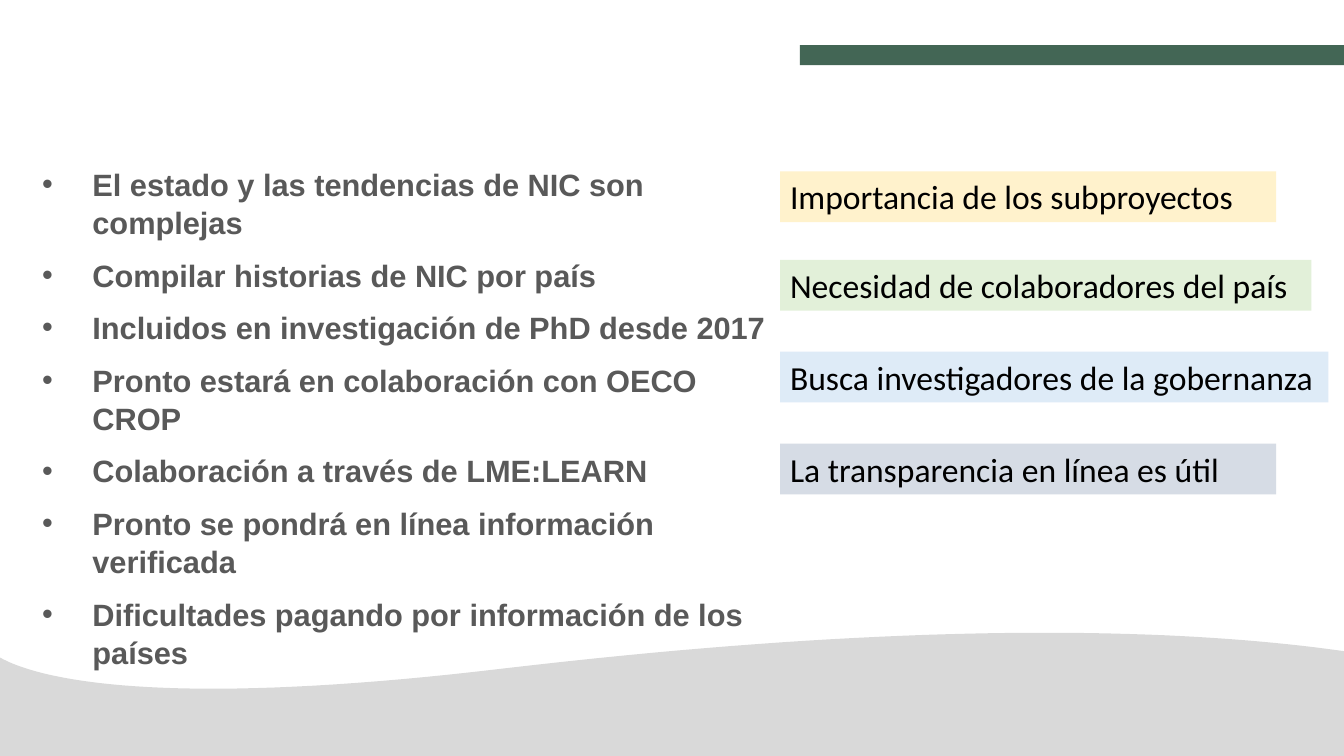
"""Build a slide of NIC findings beside four highlighted conclusions."""
from lxml.etree import SubElement
from pptx import Presentation
from pptx.dml.color import RGBColor
from pptx.enum.shapes import MSO_SHAPE as SHAPE
from pptx.enum.text import MSO_ANCHOR as ANCHOR, PP_ALIGN as ALIGN
from pptx.oxml.ns import qn
from pptx.util import Cm, Pt


def paint(sp, color):
    sp.shadow.inherit = False
    sp.fill.solid()
    sp.fill.fore_color.rgb = RGBColor.from_string(color)
    sp.line.fill.background()


def add_run(p, text, font, size, color, bold=False):
    r = p.add_run()
    r.text = text
    r.font.name, r.font.size, r.font.bold = font, Pt(size), bold
    r.font.color.rgb = RGBColor.from_string(color)


prs = Presentation()
prs.slide_width, prs.slide_height = Cm(33.87), Cm(19.05)
s = prs.slides.add_slide(prs.slide_layouts[6])

wave_curves = [
    [(33.87, 16.41), (29.59, 15.8), (22.91, 15.65), (12.75, 16.84)],
    [(12.75, 16.84), (3.38, 17.96), (0.66, 16.97), (-0.05, 16.54)],
]
steps = 40
wave = [(33.87, 16.41)]
for curve in wave_curves:
    for i in range(1, steps + 1):
        t = i / steps
        weights = ((1 - t) ** 3, 3 * t * (1 - t) ** 2, 3 * t ** 2 * (1 - t), t ** 3)
        wave.append(tuple(sum(w * pt[axis] for w, pt in zip(weights, curve)) for axis in (0, 1)))
wave.append((-0.05, 19.05))
builder = s.shapes.build_freeform(Cm(33.87), Cm(19.05))
builder.add_line_segments([(Cm(x), Cm(y)) for x, y in wave], close=True)
paint(builder.convert_to_shape(), "D9D9D9")

bar = s.shapes.add_shape(SHAPE.RECTANGLE, Cm(20.16), Cm(1.14), Cm(13.71), Cm(0.5))
paint(bar, "436655")

findings = [
    "El estado y las tendencias de NIC son complejas",
    "Compilar historias de NIC por país",
    "Incluidos en investigación de PhD desde 2017",
    "Pronto estará en colaboración con OECO CROP",
    "Colaboración a través de LME:LEARN",
    "Pronto se pondrá en línea información verificada",
    "Dificultades pagando por información de los países",
]
tf = s.shapes.add_textbox(Cm(0.81), Cm(4.01), Cm(18.85), Cm(11.23)).text_frame
tf.word_wrap = True
for i, finding in enumerate(findings):
    p = tf.add_paragraph() if i else tf.paragraphs[0]
    pPr = p._p.get_or_add_pPr()
    pPr.set("marL", str(Cm(1.27)))
    pPr.set("indent", str(Cm(-1.27)))
    SubElement(pPr, qn("a:buFont")).set("typeface", "Arial")
    SubElement(pPr, qn("a:buChar")).set("char", "•")
    p.line_spacing = 1.04
    p.space_after = Pt(10)
    add_run(p, finding, "Arial", 22, "595959", bold=True)

conclusions = [
    ("Importancia de los subproyectos", 4.32, 12.5, "FFF2CC"),
    ("Necesidad de colaboradores del país", 6.55, 13.39, "E2F0D9"),
    ("Busca investigadores de la gobernanza", 8.86, 13.82, "DEEBF7"),
    ("La transparencia en línea es útil", 11.18, 12.5, "D6DCE5"),
]
for text, top, width, color in conclusions:
    sp = s.shapes.add_shape(SHAPE.RECTANGLE, Cm(19.66), Cm(top), Cm(width), Cm(1.28))
    paint(sp, color)
    tf = sp.text_frame
    tf.word_wrap = True
    tf.vertical_anchor = ANCHOR.TOP
    p = tf.paragraphs[0]
    p.alignment = ALIGN.LEFT
    add_run(p, text, "Calibri", 24, "000000")

prs.save("out.pptx")
